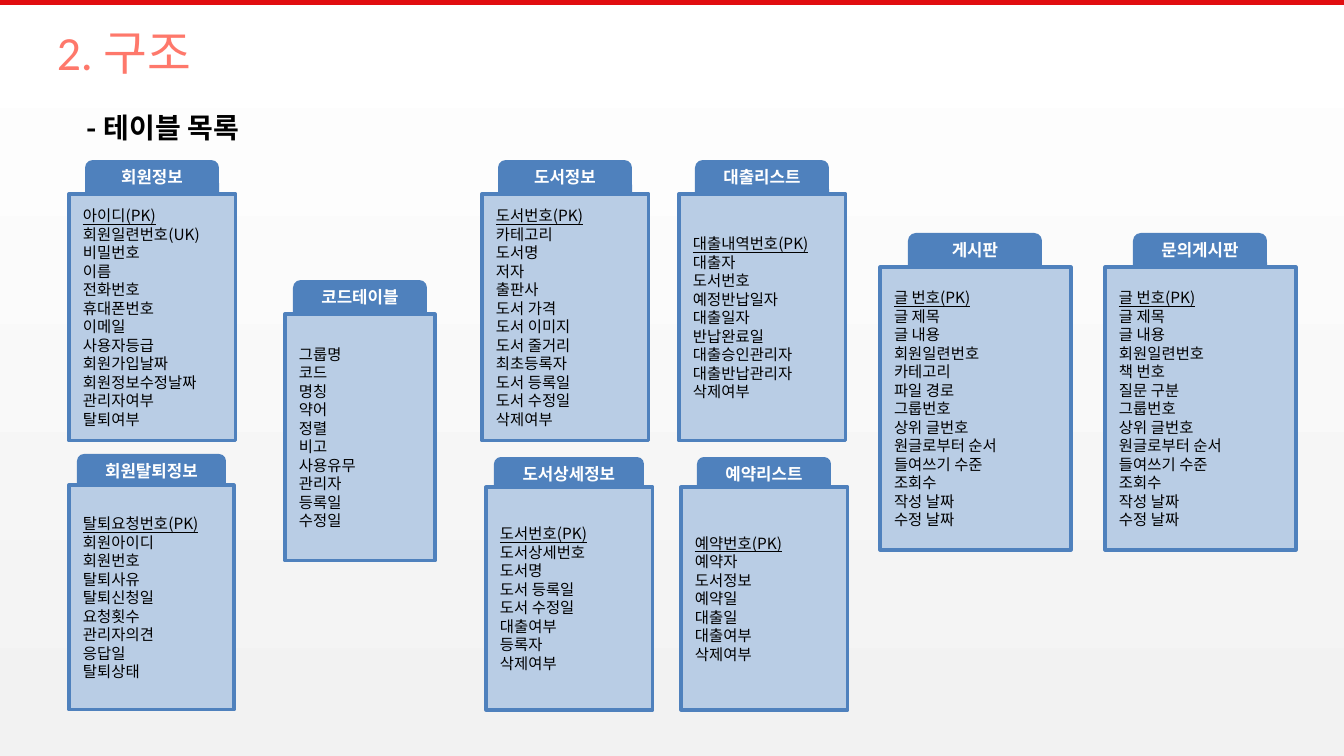
import pptx
import pptx.util
from pptx.dml.color import RGBColor
from pptx.enum.shapes import MSO_SHAPE
from pptx.enum.text import MSO_ANCHOR, PP_ALIGN
from pptx.oxml.ns import qn

PX = 914400 / 100.8
WHITE = RGBColor(0xFF, 0xFF, 0xFF)
LIGHT_GRAY = RGBColor(0xF2, 0xF2, 0xF2)
BLACK = RGBColor(0, 0, 0)
RED = RGBColor(0xE1, 0x0D, 0x10)
CORAL = RGBColor(0xFE, 0x78, 0x6B)
BLUE = RGBColor(0x4F, 0x81, 0xBD)
PALE_BLUE = RGBColor(0xB9, 0xCD, 0xE5)
KOREAN = "Noto Sans CJK KR"


def add_run(p, text, size, color, bold=False, font=KOREAN):
    r = p.add_run()
    r.text = text
    r.font.size = pptx.util.Pt(size)
    r.font.name = font
    r.font.bold = bold
    r.font.color.rgb = color
    ea = r.font._element.makeelement(qn("a:ea"), {"typeface": KOREAN})
    r.font._element.append(ea)
    return r


def add_box(shapes, kind, box, fill):
    sp = shapes.add_shape(kind, *[round(v * PX) for v in box])
    sp.shadow.inherit = False
    sp.fill.solid()
    sp.fill.fore_color.rgb = fill
    sp.line.fill.background()
    return sp


prs = pptx.Presentation()
prs.slide_width = round(1344 * PX)
prs.slide_height = round(756 * PX)
s = prs.slides.add_slide(prs.slide_layouts[6])

bg = s.background.fill
bg.gradient()
bg.gradient_angle = 270
for stop, position, color in zip(bg.gradient_stops, (0, 1), (WHITE, LIGHT_GRAY)):
    stop.position = position
    stop.color.rgb = color

add_box(s.shapes, MSO_SHAPE.RECTANGLE, (0, 0, 1344, 5), RED)

headings = [
    ("2. 구조", (47, 20, 1159, 62), 34, CORAL, False, "Calibri", MSO_ANCHOR.MIDDLE),
    ("- 테이블 목록", (77, 106, 922, 44), 20, BLACK, True, KOREAN, MSO_ANCHOR.TOP),
]
for text, box, size, color, bold, font, anchor in headings:
    tf = s.shapes.add_textbox(*[round(v * PX) for v in box]).text_frame
    tf.word_wrap = True
    tf.vertical_anchor = anchor
    add_run(tf.paragraphs[0], text, size, color, bold, font)

tables = [
    ("회원정보", (69, 194, 167, 247), 134, (34, 46),
     ["아이디(PK)", "회원일련번호(UK)", "비밀번호", "이름", "전화번호", "휴대폰번호",
      "이메일", "사용자등급", "회원가입날짜", "회원정보수정날짜", "관리자여부", "탈퇴여부"]),
    ("게시판", (880, 267, 191, 283), 134, (34, 46),
     ["글 번호(PK)", "글 제목", "글 내용", "회원일련번호", "카테고리", "파일 경로",
      "그룹번호", "상위 글번호", "원글로부터 순서", "들여쓰기 수준", "조회수",
      "작성 날짜", "수정 날짜"]),
    ("문의게시판", (1105, 267, 191, 283), 134, (34, 46),
     ["글 번호(PK)", "글 제목", "글 내용", "회원일련번호", "책 번호", "질문 구분",
      "그룹번호", "상위 글번호", "원글로부터 순서", "들여쓰기 수준", "조회수",
      "작성 날짜", "수정 날짜"]),
    ("코드테이블", (285, 314, 150, 247), 134, (34, 46),
     ["그룹명", "코드", "명칭", "약어", "정렬", "비고", "사용유무", "관리자",
      "등록일", "수정일"]),
    ("도서정보", (482, 194, 167, 247), 134, (34, 46),
     ["도서번호(PK)", "카테고리", "도서명", "저자", "출판사", "도서 가격",
      "도서 이미지", "도서 줄거리", "최초등록자", "도서 등록일", "도서 수정일",
      "삭제여부"]),
    ("도서상세정보", (486, 487, 167, 223), 150, (30, 41),
     ["도서번호(PK)", "도서상세번호", "도서명", "도서 등록일", "도서 수정일",
      "대출여부", "등록자", "삭제여부"]),
    ("대출리스트", (679, 194, 167, 247), 134, (34, 46),
     ["대출내역번호(PK)", "대출자", "도서번호", "예정반납일자", "대출일자",
      "반납완료일", "대출승인관리자", "대출반납관리자", "삭제여부"]),
    ("예약리스트", (681, 487, 167, 223), 134, (30, 41),
     ["예약번호(PK)", "예약자", "도서정보", "예약일", "대출일", "대출여부",
      "삭제여부"]),
    ("회원탈퇴정보", (69, 485, 165, 225), 149, (31, 42),
     ["탈퇴요청번호(PK)", "회원아이디", "회원번호", "탈퇴사유", "탈퇴신청일",
      "요청횟수", "관리자의견", "응답일", "탈퇴상태"]),
]
for name, body, tab_width, (lift, tab_height), fields in tables:
    x, y, w, h = body
    group = s.shapes.add_group_shape()

    tab_box = (x + (w - tab_width) // 2, y - lift, tab_width, tab_height)
    tab = add_box(group.shapes, MSO_SHAPE.ROUNDED_RECTANGLE, tab_box, BLUE)
    tf = tab.text_frame
    tf.vertical_anchor = MSO_ANCHOR.TOP
    tf.paragraphs[0].alignment = PP_ALIGN.CENTER
    add_run(tf.paragraphs[0], name, 12, WHITE, True)

    sp = add_box(group.shapes, MSO_SHAPE.RECTANGLE, body, PALE_BLUE)
    sp.line.color.rgb = BLUE
    sp.line.width = pptx.util.Pt(2.25)
    tf = sp.text_frame
    tf.word_wrap = True
    tf.vertical_anchor = MSO_ANCHOR.MIDDLE
    tf.margin_left = round(14 * PX)
    for i, field in enumerate(fields):
        p = tf.paragraphs[0] if i == 0 else tf.add_paragraph()
        p.alignment = PP_ALIGN.LEFT
        p.line_spacing = pptx.util.Pt(13.2)
        r = add_run(p, field, 11, BLACK)
        r.font.underline = field.endswith("(PK)")

prs.save("out.pptx")
